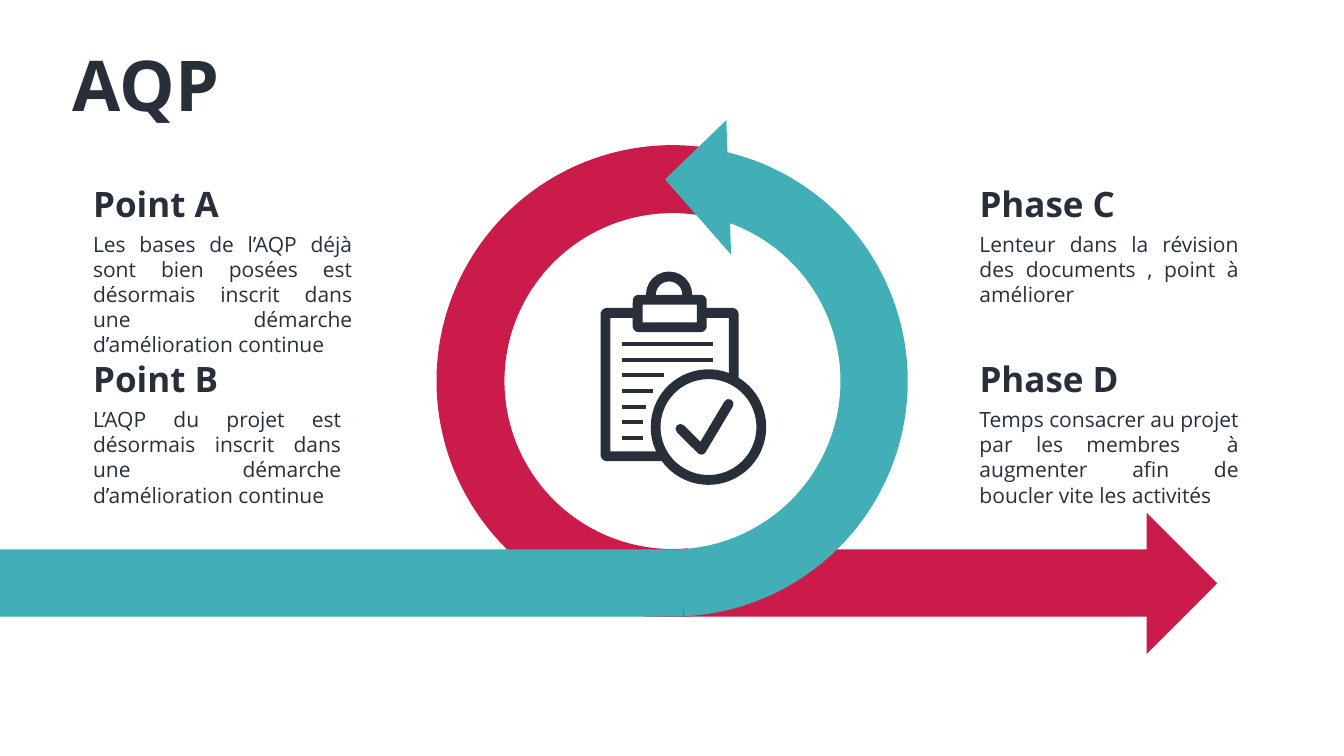
from lxml import etree
from pptx import Presentation
from pptx import util as u
from pptx.dml.color import RGBColor
from pptx.enum import shapes as s
from pptx.enum import text as t
from pptx.oxml.ns import qn

COLOURS = {"ink": "282F39", "red": "CB1B4A", "teal": "42AFB6", "white": "FFFFFF"}
HEADING_FONT, BODY_FONT = "Noto Sans", "Open Sans"
FRAME = 7


def rgb(name):
    return RGBColor.from_string(COLOURS[name])


def write(slide, words, left, top, width, height, size, font=BODY_FONT, bold=False,
          align=t.PP_ALIGN.JUSTIFY):
    frame = slide.shapes.add_textbox(*map(u.Pt, (left, top, width, height))).text_frame
    frame.word_wrap = True
    frame.auto_size = t.MSO_AUTO_SIZE.SHAPE_TO_FIT_TEXT
    line = frame.paragraphs[0]
    line.alignment = align
    run = line.add_run()
    run.text = words
    run.font.name, run.font.size, run.font.bold = font, u.Pt(size), bold
    run.font.color.rgb = rgb("ink")


def paint(part, fill=None, outline=None, width=FRAME):
    part.shadow.inherit = False
    if fill:
        part.fill.solid()
        part.fill.fore_color.rgb = rgb(fill)
    else:
        part.fill.background()
    if outline:
        part.line.color.rgb = rgb(outline)
        part.line.width = u.Pt(width)
    else:
        part.line.fill.background()


def solid(slide, kind, left, top, width, height, fill, turn=0, mirrored=False, adjust=()):
    part = slide.shapes.add_shape(kind, *map(u.Pt, (left, top, width, height)))
    paint(part, fill)
    part.rotation = turn
    if mirrored:
        part._element.spPr.find(qn("a:xfrm")).set("flipH", "1")
    for i, value in enumerate(adjust):
        part.adjustments[i] = value


def degrees(angle):
    return angle * 0.6


def loop_arrows(slide, left, top):
    kind = s.MSO_SHAPE
    bar_top, bar_height = top + 312.4, 48.2
    solid(slide, kind.RECTANGLE, left + 460, bar_top, 368, bar_height, "red")
    solid(slide, kind.BLOCK_ARC, left + 311.8, top + 23.7, 337, 337, "red", 255, True,
          (degrees(152.06), degrees(350.39), 0.144))
    solid(slide, kind.CIRCULAR_ARROW, left + 288, top, 384.5, 384.5, "teal", 87.2, True,
          (0.125, degrees(18.29), degrees(340.96), degrees(180), 0.125))
    solid(slide, kind.RECTANGLE, left, bar_top, 488, bar_height, "teal")
    solid(slide, kind.RIGHT_TRIANGLE, left + 783.4, top + 301, 71.3, 71.3, "red", 225)


def checklist_icon(slide, left, top):
    icon = slide.shapes.add_group_shape().shapes

    def framed(kind, x, y, width, height, rounding=None):
        part = icon.add_shape(kind, u.Pt(left + x + FRAME / 2), u.Pt(top + y + FRAME / 2),
                              u.Pt(width - FRAME), u.Pt(height - FRAME))
        paint(part, "white", "ink")
        if rounding is not None:
            part.adjustments[0] = rounding

    framed(s.MSO_SHAPE.ROUNDED_RECTANGLE, 0, 26, 98.6, 109.4, 0.01)
    framed(s.MSO_SHAPE.OVAL, 32.4, 0, 33, 33)
    framed(s.MSO_SHAPE.ROUNDED_RECTANGLE, 23, 16.6, 52.8, 26.6, 0.03)

    for row, end in enumerate((80.6, 80.6, 45.4, 37.4, 32.4, 30.2, 30.2)):
        y = u.Pt(top + 51.8 + 11.16 * row)
        rule = icon.add_connector(s.MSO_CONNECTOR.STRAIGHT,
                                  u.Pt(left + 15.1), y, u.Pt(left + end), y)
        rule.line.color.rgb = rgb("ink")
        rule.line.width = u.Pt(3)
        etree.SubElement(rule._element.spPr, qn("a:effectLst"))

    framed(s.MSO_SHAPE.OVAL, 35.8, 69.8, 82.5, 82.5)

    start, *rest = [(u.Pt(left + x), u.Pt(top + y))
                    for x, y in ((57, 112.3), (72, 127.2), (91.5, 94.5))]
    outline = icon.build_freeform(*start)
    outline.add_line_segments(rest, close=False)
    tick = outline.convert_to_shape()
    paint(tick, outline="ink")
    stroke = tick._element.spPr.find(qn("a:ln"))
    stroke.set("cap", "rnd")
    etree.SubElement(stroke, qn("a:round"))


def point(slide, left, top, heading, body, body_width=199.4):
    write(slide, body, left, top + 34.8, body_width, 62, 15)
    write(slide, heading, left, top, 156, 37.4, 25, HEADING_FONT, True)


def aqp_slide(deck):
    slide = deck.slides.add_slide(deck.slide_layouts[6])
    write(slide, "AQP", 44.8, 26, 214, 67.7, 50, HEADING_FONT, True, t.PP_ALIGN.LEFT)
    loop_arrows(slide, 0, 80)
    checklist_icon(slide, 429, 194)
    left_column, right_column = 59.4, 692.6
    upper_row, lower_row = 126.7, 252
    point(slide, left_column, upper_row, "Point A",
          "Les bases de l’AQP déjà sont bien posées est désormais inscrit dans "
          "une démarche d’amélioration continue")
    point(slide, left_column, lower_row, "Point B",
          "L’AQP du projet est désormais inscrit dans une démarche "
          "d’amélioration continue", 191.5)
    point(slide, right_column, upper_row, "Phase C",
          "Lenteur dans la révision des documents , point à améliorer")
    point(slide, right_column, lower_row, "Phase D",
          "Temps consacrer au projet par les membres  à augmenter afin de "
          "boucler vite les activités")


def main():
    deck = Presentation()
    deck.slide_width, deck.slide_height = u.Pt(960), u.Pt(540)
    aqp_slide(deck)
    deck.save("out.pptx")


if __name__ == "__main__":
    main()
